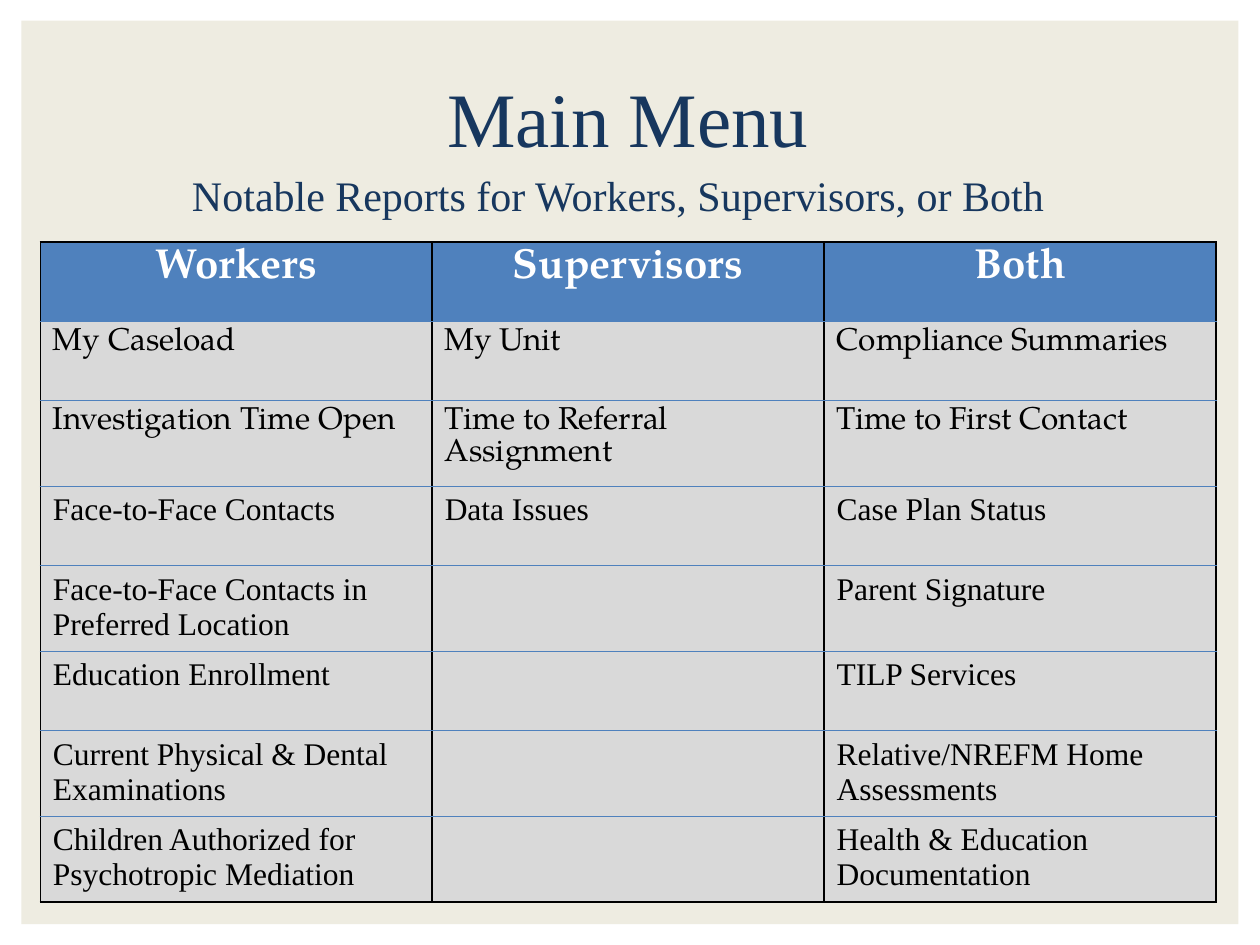
import pptx
import pptx.dml.color
import pptx.enum.shapes
import pptx.enum.text
import pptx.oxml
import pptx.oxml.ns
import pptx.util

COLORS = {"panel": "EEECE1", "navy": "17375E", "blue": "4F81BD", "gray": "D9D9D9",
          "black": "000000", "white": "FFFFFF"}
SERIF, BOOK = "Times New Roman", "TeX Gyre Pagella"
HEADINGS = ["Workers", "Supervisors", "Both"]
REPORTS = [
    ["My Caseload", "My Unit", "Compliance Summaries"],
    ["Investigation Time Open", "Time to Referral Assignment", "Time to First Contact"],
    ["Face-to-Face Contacts", "Data Issues", "Case Plan Status"],
    ["Face-to-Face Contacts in Preferred Location", "", "Parent Signature"],
    ["Education Enrollment", "", "TILP Services"],
    ["Current Physical & Dental Examinations", "", "Relative/NREFM Home Assessments"],
    ["Children Authorized for Psychotropic Mediation", "", "Health & Education Documentation"],
]
ROW_HEIGHTS = [0.63, 0.63, 0.68, 0.63, 0.68, 0.63, 0.68, 0.68]
BOOK_ROWS = 3


class MenuSlide:
    """Holds the style and the current slide; lengths are shares of its size."""

    def __init__(self, deck):
        self.width, self.height = deck.slide_width, deck.slide_height
        self.slide = deck.slides.add_slide(deck.slide_layouts[5])

    def color(self, name):
        return pptx.dml.color.RGBColor.from_string(COLORS[name])

    def box(self, left, top, width, height):
        return (round(left * self.width), round(top * self.height),
                round(width * self.width), round(height * self.height))

    def add_words(self, frame, words, size, font, color, centered=True, bold=False):
        paragraph = frame.paragraphs[0]
        if centered:
            paragraph.alignment = pptx.enum.text.PP_ALIGN.CENTER
        run = paragraph.add_run()
        run.text = words
        run.font.size = pptx.util.Pt(size)
        run.font.name = font
        run.font.bold = bold
        run.font.color.rgb = self.color(color)

    def panel(self, *place):
        backdrop = self.slide.shapes.add_shape(
            pptx.enum.shapes.MSO_SHAPE.RECTANGLE, *self.box(*place))
        backdrop.shadow.inherit = False
        backdrop.fill.solid()
        backdrop.fill.fore_color.rgb = self.color("panel")
        backdrop.line.fill.background()
        self.slide.shapes._spTree.insert(2, backdrop._element)

    def title(self, words, *place):
        heading = self.slide.shapes.title
        heading.left, heading.top, heading.width, heading.height = self.box(*place)
        heading.text_frame.vertical_anchor = pptx.enum.text.MSO_ANCHOR.MIDDLE
        self.add_words(heading.text_frame, words, 44, SERIF, "navy")

    def subtitle(self, words, *place):
        frame = self.slide.shapes.add_textbox(*self.box(*place)).text_frame
        frame.word_wrap = True
        self.add_words(frame, words, 24, SERIF, "navy")

    def border(self, cell, sides):
        properties = cell._tc.get_or_add_tcPr()
        for index, (side, (color, points)) in enumerate(sides.items()):
            properties.insert(index, pptx.oxml.parse_xml(
                f'<a:ln{side} {pptx.oxml.ns.nsdecls("a")} w="{pptx.util.Pt(points)}">'
                f'<a:solidFill><a:srgbClr val="{COLORS[color]}"/></a:solidFill></a:ln{side}>'))

    def table(self, rows, heights, *place):
        grid = self.slide.shapes.add_table(len(rows), len(rows[0]), *self.box(*place)).table
        outer, inner = ("black", 1), ("blue", 0.79)
        last = len(rows) - 1
        for r, (texts, height) in enumerate(zip(rows, heights)):
            grid.rows[r].height = pptx.util.Inches(height)
            header = r == 0
            font = BOOK if r < BOOK_ROWS else SERIF
            for c, words in enumerate(texts):
                cell = grid.cell(r, c)
                cell.fill.solid()
                cell.fill.fore_color.rgb = self.color("blue" if header else "gray")
                self.border(cell, {"L": outer, "R": outer,
                                   "T": outer if header else inner,
                                   "B": outer if r == last else inner})
                if words:
                    self.add_words(cell.text_frame, words, 24 if header else 18, font,
                                   "white" if header else "black", header, header)


def main():
    deck = pptx.Presentation()
    deck.slide_width, deck.slide_height = pptx.util.Inches(10), pptx.util.Inches(7.5)
    menu = MenuSlide(deck)
    menu.panel(0.017, 0.022, 0.966, 0.956)
    menu.title("Main Menu", 0, 0.04, 0.997, 0.167)
    menu.table([HEADINGS] + REPORTS, ROW_HEIGHTS, 0.032, 0.256, 0.933, 0.7)
    menu.subtitle("Notable Reports for Workers, Supervisors, or Both", 0.032, 0.173, 0.917, 0.067)
    deck.save("out.pptx")


if __name__ == "__main__":
    main()
